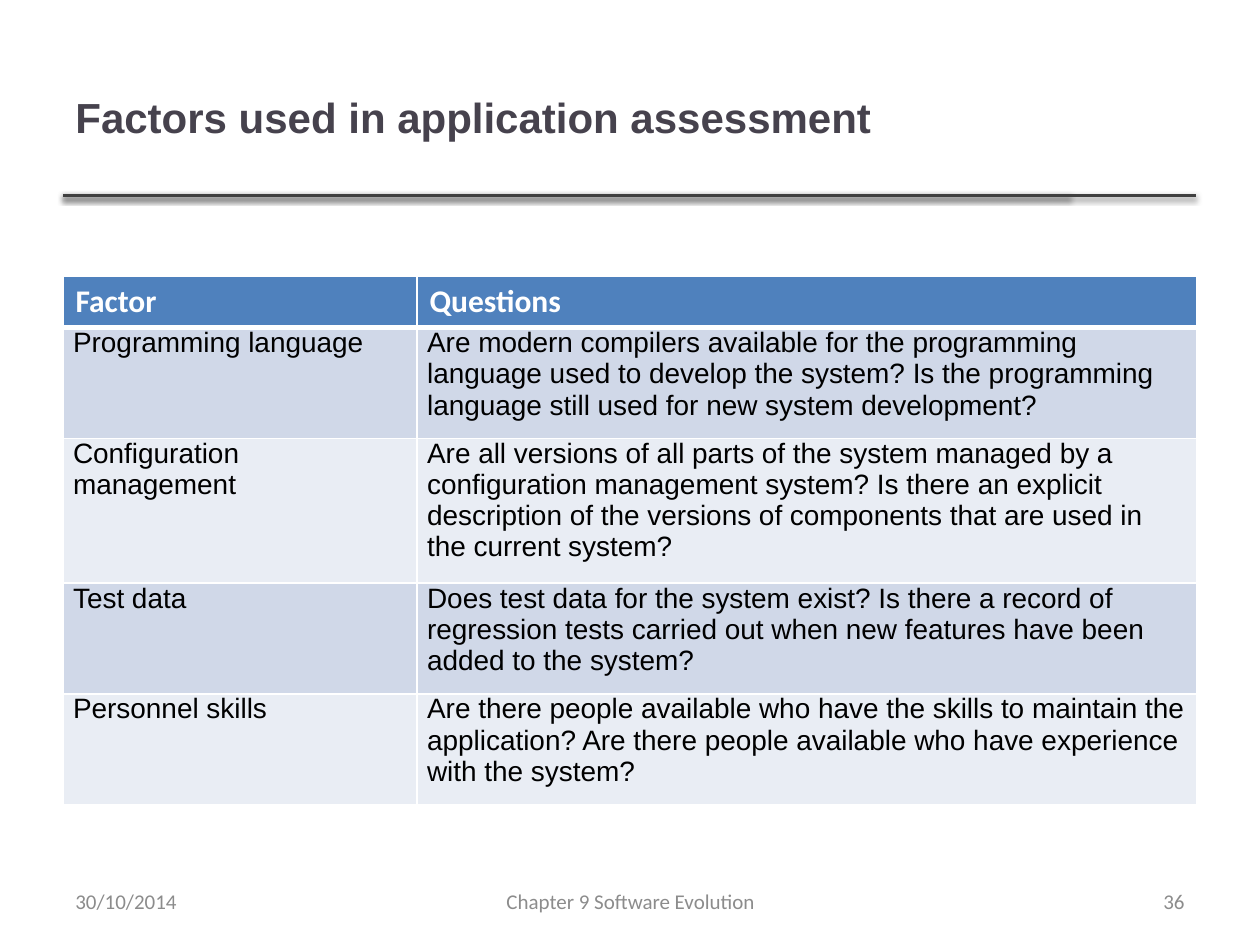
from pptx import Presentation
from pptx.dml.color import RGBColor
from pptx.enum.shapes import MSO_CONNECTOR as Link
from pptx.enum.text import MSO_ANCHOR as Anchor, PP_ALIGN as Align
from pptx.oxml import parse_xml
from pptx.oxml.ns import nsdecls
from pptx.util import Inches, Pt

HUES = {"title": "46424D", "rule": "404040", "head": "4F81BD", "odd": "D0D8E8",
        "even": "E9EDF4", "white": "FFFFFF", "black": "000000", "foot": "8C8C8C"}
ROWS = [
    ("Factor", "Questions"),
    ("Programming language",
     "Are modern compilers available for the programming language used to develop "
     "the system? Is the programming language still used for new system development?"),
    ("Configuration management",
     "Are all versions of all parts of the system managed by a configuration "
     "management system? Is there an explicit description of the versions of "
     "components that are used in the current system?"),
    ("Test data",
     "Does test data for the system exist? Is there a record of regression tests "
     "carried out when new features have been added to the system?"),
    ("Personnel skills",
     "Are there people available who have the skills to maintain the application? "
     "Are there people available who have experience with the system?"),
]
HEIGHTS = [0.41, 0.82, 1.06, 0.82, 0.82]


def write(frame, text, size, face, hue, bold=False, align=Align.LEFT):
    """Put one styled run in the first paragraph and return the paragraph."""
    para = frame.paragraphs[0]
    para.alignment = align
    run = para.add_run()
    run.text = text
    run.font.size = Pt(size)
    run.font.name = face
    run.font.bold = bold
    run.font.color.rgb = RGBColor.from_string(HUES[hue])
    return para


def add_box(left, top, width, height, *style, **more):
    box = slide.shapes.add_textbox(Inches(left), Inches(top), Inches(width), Inches(height))
    frame = box.text_frame
    frame.word_wrap = True
    frame.vertical_anchor = Anchor.MIDDLE
    write(frame, *style, **more)


deck = Presentation()
deck.slide_width, deck.slide_height = Inches(10), Inches(7.5)
slide = deck.slides.add_slide(deck.slide_layouts[6])

# Double rule under the title
for end in (8.49, 9.49):
    rule = slide.shapes.add_connector(
        Link.STRAIGHT, Inches(0.5), Inches(1.55), Inches(end), Inches(1.55))
    rule.line.color.rgb = RGBColor.from_string(HUES["rule"])
    rule.line.width = Pt(2)
    rule._element.spPr.append(parse_xml(
        f'<a:effectLst {nsdecls("a")}><a:outerShdw blurRad="{Pt(3.1)}" dist="{Pt(1.6)}" '
        f'dir="5400000" rotWithShape="0"><a:srgbClr val="{HUES["black"]}">'
        '<a:alpha val="38000"/></a:srgbClr></a:outerShdw></a:effectLst>'))

add_box(0.5, 0.3, 7.98, 1.25, "Factors used in application assessment",
        24, "Arial", "title", bold=True)

# Table of factors
table = slide.shapes.add_table(
    len(ROWS), 2, Inches(0.5), Inches(2.19), Inches(9), Inches(sum(HEIGHTS))).table
for col, width in zip(table.columns, (2.81, 6.19)):
    col.width = Inches(width)
for r, (texts, height) in enumerate(zip(ROWS, HEIGHTS)):
    table.rows[r].height = Inches(height)
    for c, text in enumerate(texts):
        cell = table.cell(r, c)
        if r == 0:
            fill = "head"
            write(cell.text_frame, text, 18, "Calibri", "white", bold=True)
        else:
            fill = "odd" if r % 2 else "even"
            cell.margin_left = cell.margin_right = cell.margin_bottom = Inches(0.08)
            cell.margin_top = 0
            para = write(cell.text_frame, text, 16, "Arial", "black")
            para.space_after = Pt(6)
        props = cell._tc.get_or_add_tcPr()
        for side in "LRTB":
            thick = (side, r) in (("B", 0), ("T", 1))
            props.append(parse_xml(
                f'<a:ln{side} {nsdecls("a")} w="{Pt(3 if thick else 1)}"><a:solidFill>'
                f'<a:srgbClr val="{HUES["white"]}"/></a:solidFill></a:ln{side}>'))
        cell.fill.solid()
        cell.fill.fore_color.rgb = RGBColor.from_string(HUES[fill])

# Footer
for left, width, text, align in (
        (0.5, 2.33, "30/10/2014", Align.LEFT),
        (3.42, 3.17, "Chapter 9 Software Evolution", Align.CENTER),
        (7.17, 2.33, "36", Align.RIGHT)):
    add_box(left, 6.95, width, 0.4, text, 12, "Calibri", "foot", align=align)

deck.save("out.pptx")
